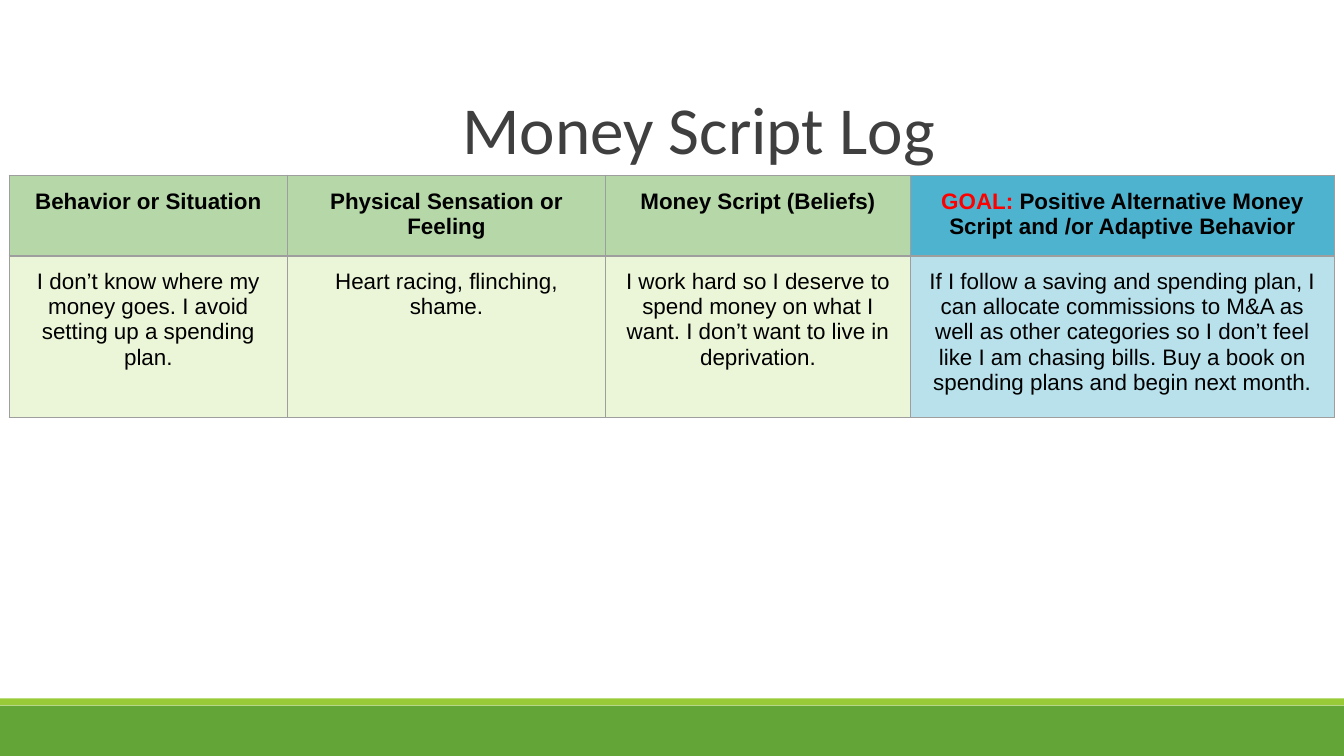
"""Build the Money Script Log slide."""
from dataclasses import dataclass

from lxml import etree
from pptx import Presentation
from pptx.dml.color import RGBColor
from pptx.enum.shapes import MSO_SHAPE
from pptx.enum.text import MSO_ANCHOR, PP_ALIGN
from pptx.oxml.ns import qn
from pptx.slide import Slide
from pptx.table import _Cell
from pptx.text.text import _Paragraph
from pptx.util import Pt

RECTANGLE = MSO_SHAPE.RECTANGLE
CENTER = PP_ALIGN.CENTER
TOP = MSO_ANCHOR.TOP

SLIDE_WIDTH, SLIDE_HEIGHT = 720, 405
INSET = Pt(7.2)
BORDER_WIDTH, BORDER_COLOR = Pt(0.75), "9E9E9E"
TABLE_LEFT, TABLE_TOP = 5, 93.9
COLUMN_WIDTHS = (149, 170.5, 163.3, 227.2)
ROW_HEIGHTS = (40.6, 81.4)
TITLE_FORMAT = {"name": "Calibri", "size": Pt(36)}
HEADER_FORMAT = {"name": "Arial", "size": Pt(12), "bold": True}
BODY_FORMAT = {**HEADER_FORMAT, "bold": False}


@dataclass(frozen=True)
class Span:
    """A stretch of text in one colour."""
    text: str
    color: str = "000000"


@dataclass(frozen=True)
class Column:
    """A log column: its heading, its entry and their fills."""
    heading: tuple[Span, ...]
    entry: str
    heading_fill: str = "B6D7A8"
    entry_fill: str = "EBF5D7"


@dataclass(frozen=True)
class Band:
    """A full-width strip at the foot of the slide."""
    top: float
    height: float
    color: str


BANDS = (Band(378, 27, "63A537"), Band(374.2, 3.8, "99CB38"))
COLUMNS = (
    Column((Span("Behavior or Situation"),),
           "I don’t know where my money goes. I avoid setting up a spending plan."),
    Column((Span("Physical Sensation or Feeling"),),
           "Heart racing, flinching, shame."),
    Column((Span("Money Script (Beliefs)"),),
           "I work hard so I deserve to spend money on what I want. "
           "I don’t want to live in deprivation."),
    Column((Span("GOAL: ", "FF0000"),
            Span("Positive Alternative Money Script and /or Adaptive Behavior")),
           "If I follow a saving and spending plan, I can allocate commissions to M&A "
           "as well as other categories so I don’t feel like I am chasing bills. "
           "Buy a book on spending plans and begin next month.",
           "4EB3CF", "B8E1EC"),
)


def rgb(color: str) -> RGBColor:
    """Turn a hex string into a colour."""
    return RGBColor.from_string(color)


def write_spans(para: _Paragraph, spans: tuple[Span, ...], font_format: dict) -> None:
    """Write centred spans into a paragraph."""
    para.alignment = CENTER
    for span in spans:
        run = para.add_run()
        run.text = span.text
        run.font.color.rgb = rgb(span.color)
        for name, value in font_format.items():
            setattr(run.font, name, value)


def draw_band(page: Slide, band: Band) -> None:
    """Draw one strip across the slide."""
    strip = page.shapes.add_shape(
        RECTANGLE, 0, Pt(band.top), Pt(SLIDE_WIDTH), Pt(band.height))
    strip.shadow.inherit = False
    strip.fill.solid()
    strip.fill.fore_color.rgb = rgb(band.color)
    strip.line.fill.background()


def draw_title(page: Slide, title: Span) -> None:
    """Draw the slide title."""
    box = page.shapes.add_textbox(Pt(38.9), Pt(46), Pt(671), Pt(36.7))
    frame = box.text_frame
    frame_format = {"word_wrap": True, "vertical_anchor": TOP,
                    "margin_left": INSET, "margin_right": INSET,
                    "margin_top": INSET, "margin_bottom": INSET}
    for name, value in frame_format.items():
        setattr(frame, name, value)
    para = frame.paragraphs[0]
    para.line_spacing = 0.85
    write_spans(para, (title,), TITLE_FORMAT)


def add_borders(cell: _Cell) -> None:
    """Outline all four sides of a cell."""
    properties = cell._tc.get_or_add_tcPr()
    for side in ("lnL", "lnR", "lnT", "lnB"):
        line = etree.SubElement(properties, qn(f"a:{side}"), w=str(BORDER_WIDTH))
        fill = etree.SubElement(line, qn("a:solidFill"))
        etree.SubElement(fill, qn("a:srgbClr"), val=BORDER_COLOR)


def fill_cell(cell: _Cell, spans: tuple[Span, ...], color: str, font_format: dict) -> None:
    """Format a table cell and write its text."""
    add_borders(cell)
    cell.fill.solid()
    cell.fill.fore_color.rgb = rgb(color)
    for side in ("left", "right", "top", "bottom"):
        setattr(cell, f"margin_{side}", INSET)
    write_spans(cell.text_frame.paragraphs[0], spans, font_format)


def draw_log(page: Slide, columns: tuple[Column, ...]) -> None:
    """Draw the log table."""
    table = page.shapes.add_table(
        len(ROW_HEIGHTS), len(columns), Pt(TABLE_LEFT), Pt(TABLE_TOP),
        Pt(sum(COLUMN_WIDTHS)), Pt(sum(ROW_HEIGHTS))).table
    table.horz_banding = False
    for row, height in zip(table.rows, ROW_HEIGHTS):
        row.height = Pt(height)
    for index, (column, width) in enumerate(zip(columns, COLUMN_WIDTHS)):
        table.columns[index].width = Pt(width)
        fill_cell(table.cell(0, index), column.heading, column.heading_fill, HEADER_FORMAT)
        fill_cell(table.cell(1, index), (Span(column.entry),), column.entry_fill, BODY_FORMAT)


def main() -> None:
    """Build and save the deck."""
    deck = Presentation()
    deck.slide_width, deck.slide_height = Pt(SLIDE_WIDTH), Pt(SLIDE_HEIGHT)
    page = deck.slides.add_slide(deck.slide_layouts[6])
    for band in BANDS:
        draw_band(page, band)
    draw_title(page, Span("Money Script Log", "3F3F3F"))
    draw_log(page, COLUMNS)
    deck.save("out.pptx")


if __name__ == "__main__":
    main()
